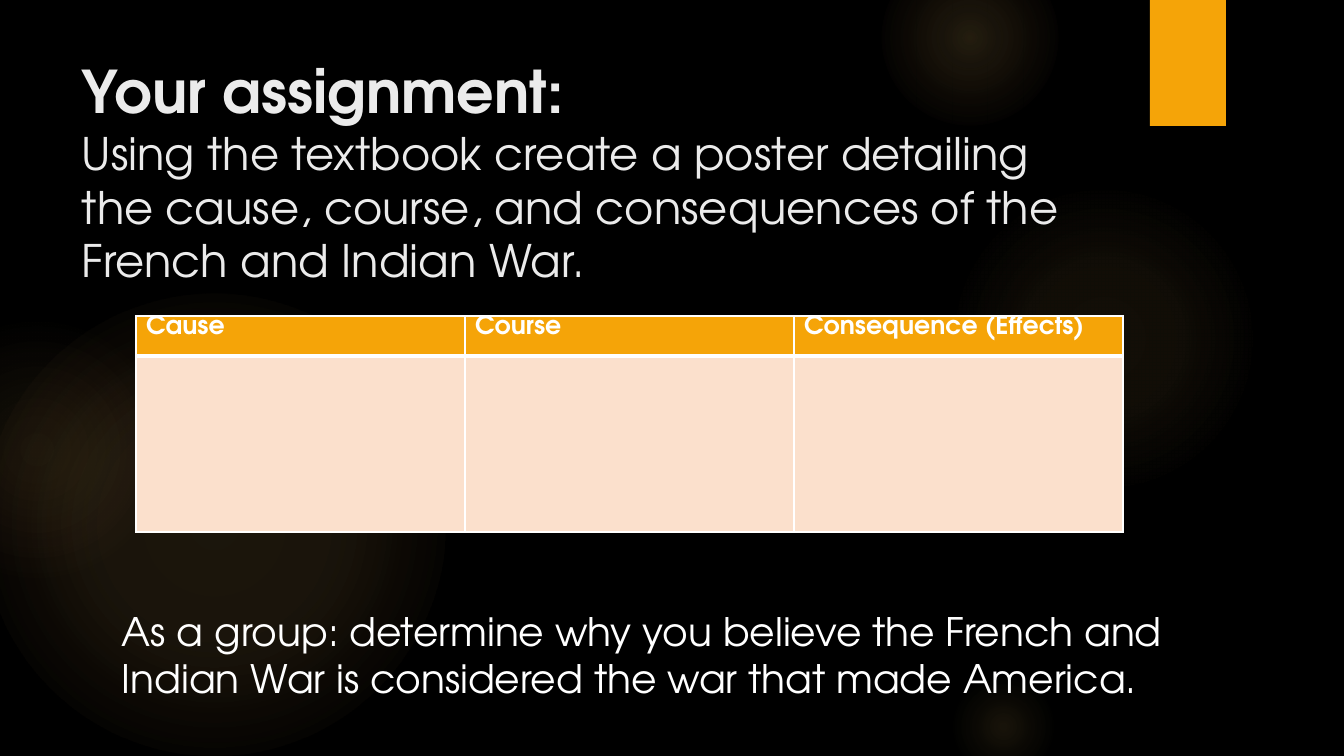
from pptx import Presentation
from pptx.dml.color import RGBColor
from pptx.enum.shapes import MSO_SHAPE
from pptx.enum.text import MSO_ANCHOR
from pptx.oxml import parse_xml
from pptx.oxml.ns import nsdecls
from pptx.util import Pt

FONT = "TeX Gyre Adventor"
AMBER, PEACH, WHITE, PALE = "F5A408", "FBE0CC", "FFFFFF", "EBEBEB"
GLOWS = [
    (-17, 294, 462, [(0, "FAC96A", 11), (36, "FAC96A", 10), (75, "FAC96A", 0)]),
    (-93, 320, 260, [(0, "FAC96A", 8), (36, "FAC96A", 5), (71, "F59B74", 0)]),
    (949, 184, 310, [(0, "FAC96A", 7), (36, "FAC96A", 6), (69, "FAC96A", 0)]),
    (882, -50, 176, [(0, "FAC96A", 14), (36, "FAC96A", 7), (73, "FAC96A", 0)]),
    (949, 672, 109, [(0, "FAC96A", 10), (31, "FAC96A", 5), (66, "FAC96A", 0)]),
]
TAB = (1150, 0, 76, 126)
TITLE = (72, 50, 1037, 240)
HEAD = "Your assignment:"
TASK = ("Using the textbook create a poster detailing the cause, course, "
        "and consequences of the French and Indian War.")
GRID = (136, 316, 987, 216)
ROWS = [40, 176]
COLS = ["Cause", "Course", "Consequence (Effects)"]
NOTE = (112, 602, 1078, 105)
GROUP = ("As a group: determine why you believe the French and Indian War "
         "is considered the war that made America.")


def px(n):
    return round(n * 914400 / 100.8)


def box(area):
    return [px(n) for n in area]


def tint(code):
    return RGBColor.from_string(code)


def write(para, text, size=18, color=WHITE, bold=False):
    run = para.add_run()
    run.text = text
    run.font.name = FONT
    run.font.size = Pt(size)
    run.font.bold = bold
    run.font.color.rgb = tint(color)


def shape(kind, area, color):
    item = slide.shapes.add_shape(kind, *box(area))
    item.shadow.inherit = False
    item.fill.solid()
    item.fill.fore_color.rgb = tint(color)
    item.line.fill.background()
    return item


def glow(left, top, size, stops):
    item = shape(MSO_SHAPE.OVAL, (left, top, size, size), stops[0][1])
    marks = "".join(
        f'<a:gs pos="{pos * 1000}"><a:srgbClr val="{code}">'
        f'<a:alpha val="{alpha * 1000}"/></a:srgbClr></a:gs>'
        for pos, code, alpha in stops)
    fill = parse_xml(
        f'<a:gradFill {nsdecls("a")}><a:gsLst>{marks}</a:gsLst>'
        '<a:path path="circle"><a:fillToRect l="50000" t="50000" '
        'r="50000" b="50000"/></a:path></a:gradFill>')
    props = item.element.spPr
    props.replace(props.find(".//{*}solidFill"), fill)


def frame(area):
    body = slide.shapes.add_textbox(*box(area)).text_frame
    body.word_wrap = True
    return body.paragraphs[0]


def edge(cell, widths):
    props = cell._tc.get_or_add_tcPr()
    for spot, (side, width) in enumerate(widths.items()):
        props.insert(spot, parse_xml(
            f'<a:ln{side} {nsdecls("a")} w="{Pt(width)}"><a:solidFill>'
            f'<a:srgbClr val="{WHITE}"/></a:solidFill></a:ln{side}>'))


deck = Presentation()
deck.slide_width, deck.slide_height = px(1344), px(756)
slide = deck.slides.add_slide(deck.slide_layouts[6])
slide.background.fill.solid()
slide.background.fill.fore_color.rgb = tint("000000")

for item in GLOWS:
    glow(*item)
shape(MSO_SHAPE.RECTANGLE, TAB, AMBER)

para = frame(TITLE)
write(para, HEAD, size=42, color=PALE, bold=True)
para.add_line_break()
write(para, TASK, size=32, color=PALE)

table = slide.shapes.add_table(len(ROWS), len(COLS), *box(GRID)).table
for row, high in enumerate(ROWS):
    table.rows[row].height = px(high)
    for col, name in enumerate(COLS):
        table.columns[col].width = px(GRID[2] / len(COLS))
        cell = table.cell(row, col)
        cell.fill.solid()
        cell.fill.fore_color.rgb = tint(PEACH if row else AMBER)
        cell.vertical_anchor = MSO_ANCHOR.TOP
        cell.margin_top = cell.margin_bottom = 0
        edge(cell, {"L": 1, "R": 1, "T": 1 if row else 1, "B": 1 if row else 3}
             if not row else {"L": 1, "R": 1, "T": 3, "B": 1})
        if not row:
            write(cell.text_frame.paragraphs[0], name, bold=True)

write(frame(NOTE), GROUP, size=28)
deck.save("out.pptx")
